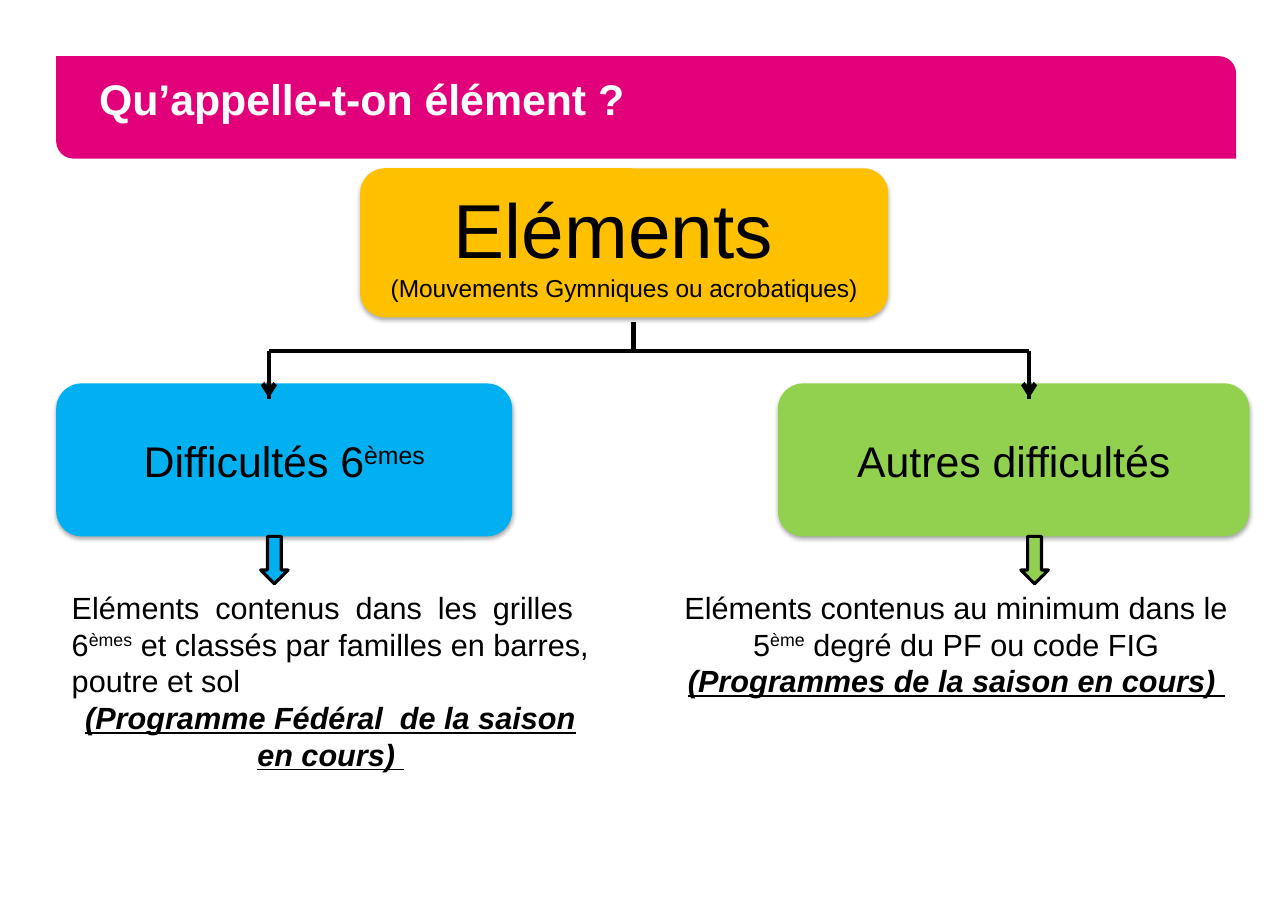
from lxml import etree
from pptx import Presentation
from pptx.dml.color import RGBColor
from pptx.enum.shapes import MSO_CONNECTOR, MSO_SHAPE
from pptx.enum.text import MSO_ANCHOR, MSO_AUTO_SIZE, PP_ALIGN
from pptx.oxml import parse_xml
from pptx.oxml.ns import nsdecls, qn
from pptx.util import Pt

STRAIGHT = MSO_CONNECTOR.STRAIGHT
BANNER, CARD, DOWN = (MSO_SHAPE.ROUND_2_DIAG_RECTANGLE,
                      MSO_SHAPE.ROUNDED_RECTANGLE, MSO_SHAPE.DOWN_ARROW)
TOP, MIDDLE = MSO_ANCHOR.TOP, MSO_ANCHOR.MIDDLE
LEFT, CENTER, JUSTIFY = PP_ALIGN.LEFT, PP_ALIGN.CENTER, PP_ALIGN.JUSTIFY

PINK = RGBColor(0xE2, 0x00, 0x7A)
AMBER = RGBColor(0xFF, 0xC0, 0x00)
BLUE = RGBColor(0x00, 0xB0, 0xF0)
GREEN = RGBColor(0x92, 0xD0, 0x50)
BLACK = RGBColor(0, 0, 0)
WHITE = RGBColor(0xFF, 0xFF, 0xFF)

FONT = "Arial"
SHADOW = (f'<a:effectLst {nsdecls("a")}>'
          '<a:outerShdw blurRad="40000" dist="23000" dir="5400000" rotWithShape="0">'
          '<a:srgbClr val="000000"><a:alpha val="35000"/></a:srgbClr>'
          '</a:outerShdw></a:effectLst>')


def points(*lengths):
    return [Pt(length) for length in lengths]


def set_frame(frame, anchor, inset_x=8, inset_y=4):
    frame.word_wrap = True
    frame.auto_size = MSO_AUTO_SIZE.NONE
    frame.vertical_anchor = anchor
    frame.margin_left = frame.margin_right = Pt(inset_x)
    frame.margin_top = frame.margin_bottom = Pt(inset_y)


def format_paragraph(paragraph, size, color=BLACK, align=CENTER, strong=False):
    paragraph.alignment = align
    font = paragraph.font
    font.name, font.size, font.color.rgb = FONT, Pt(size), color
    if strong:
        font.bold = font.italic = font.underline = True


def write(paragraph, text):
    """Add text in which the part between two ^ marks is superscript."""
    for index, part in enumerate(text.split("^")):
        run = paragraph.add_run()
        run.text = part
        if index % 2:
            run._r.get_or_add_rPr().set("baseline", "30000")


def add_banner(slide, box, text):
    banner = slide.shapes.add_shape(BANNER, *points(*box))
    banner.adjustments[0], banner.adjustments[1] = 0, 0.17
    banner.shadow.inherit = False
    banner.fill.solid()
    banner.fill.fore_color.rgb = PINK
    banner.line.fill.background()

    title = slide.shapes.title
    title._element.addprevious(banner._element)
    title.left, title.top, title.width, title.height = points(*box)
    set_frame(title.text_frame, MIDDLE, 28, 3.6)
    heading = title.text_frame.paragraphs[0]
    write(heading, text)
    heading.line_spacing = Pt(22)
    format_paragraph(heading, 28, WHITE, LEFT)
    heading.font.bold = True


def add_card(slide, box, color, lines, anchor=MIDDLE):
    """Add a shadowed rounded card; lines are pairs of text and size."""
    card = slide.shapes.add_shape(CARD, *points(*box))
    card.fill.solid()
    card.fill.fore_color.rgb = color
    card.line.fill.background()
    card._element.spPr.append(parse_xml(SHADOW))
    frame = card.text_frame
    set_frame(frame, anchor)
    for index, (text, size) in enumerate(lines):
        paragraph = frame.add_paragraph() if index else frame.paragraphs[0]
        write(paragraph, text)
        format_paragraph(paragraph, size)


def add_link(slide, start, end, arrow=False):
    link = slide.shapes.add_connector(STRAIGHT, *points(*start, *end))
    link.line.color.rgb = BLACK
    link.line.width = Pt(3)
    if arrow:
        etree.SubElement(link.line._get_or_add_ln(), qn("a:tailEnd"), type="arrow")
    etree.SubElement(link._element.spPr, qn("a:effectLst"))


def add_tree(slide, trunk_x, top, bar_y, stems):
    """Draw the trunk, the bar and one arrow down to each branch."""
    add_link(slide, (trunk_x, top), (trunk_x, bar_y))
    add_link(slide, (stems[0], bar_y), (stems[-1], bar_y))
    for stem in stems:
        add_link(slide, (stem, bar_y), (stem, bar_y + 31))


def add_branch(slide, box, color, label, stem, text_span, align, detail, source):
    """Add a card with its incoming arrow, block arrow and explanation below."""
    left, top, width, height = box
    bottom = top + height
    add_card(slide, box, color, [(label, 28)])
    add_link(slide, (stem, top - 21.5), (stem, top + 9.5), arrow=True)

    pointer = slide.shapes.add_shape(DOWN, *points(stem - 5.4, bottom, 18, 31))
    pointer.shadow.inherit = False
    pointer.fill.solid()
    pointer.fill.fore_color.rgb = color
    pointer.line.color.rgb = BLACK
    pointer.line.width = Pt(2)

    text_left, text_width = text_span
    explanation = slide.shapes.add_textbox(
        *points(text_left, bottom + 30.2, text_width, 130))
    frame = explanation.text_frame
    set_frame(frame, TOP)
    write(frame.paragraphs[0], detail)
    format_paragraph(frame.paragraphs[0], 20, align=align)
    programme = frame.add_paragraph()
    write(programme, source)
    format_paragraph(programme, 20, strong=True)


def main():
    deck = Presentation()
    deck.slide_width, deck.slide_height = points(841.68, 595.44)
    slide = deck.slides.add_slide(deck.slide_layouts[5])

    add_banner(slide, (36.7, 36.7, 771.1, 67), "Qu’appelle-t-on élément ?")
    add_card(slide, (235.4, 110, 345, 97.4), AMBER,
             [("Eléments ", 50), ("(Mouvements Gymniques ou acrobatiques)", 16)], TOP)

    left_stem, right_stem = 175.7, 672.5
    add_branch(slide, (36.7, 250.6, 298, 100), BLUE, "Difficultés 6^èmes^",
               left_stem, (38.9, 354.2), JUSTIFY,
               "Eléments contenus dans les grilles  6^èmes^ et classés par familles "
               "en barres, poutre et sol ",
               "(Programme Fédéral  de la saison en cours) ")
    add_branch(slide, (508.3, 250.6, 308.2, 100), GREEN, "Autres difficultés",
               right_stem, (433.4, 383), CENTER,
               "Eléments contenus au minimum dans le 5^ème^ degré du PF ou code FIG",
               "(Programmes de la saison en cours) ")
    add_tree(slide, 414, 210.2, 229.5, (left_stem, right_stem))

    deck.save("out.pptx")


if __name__ == "__main__":
    main()
